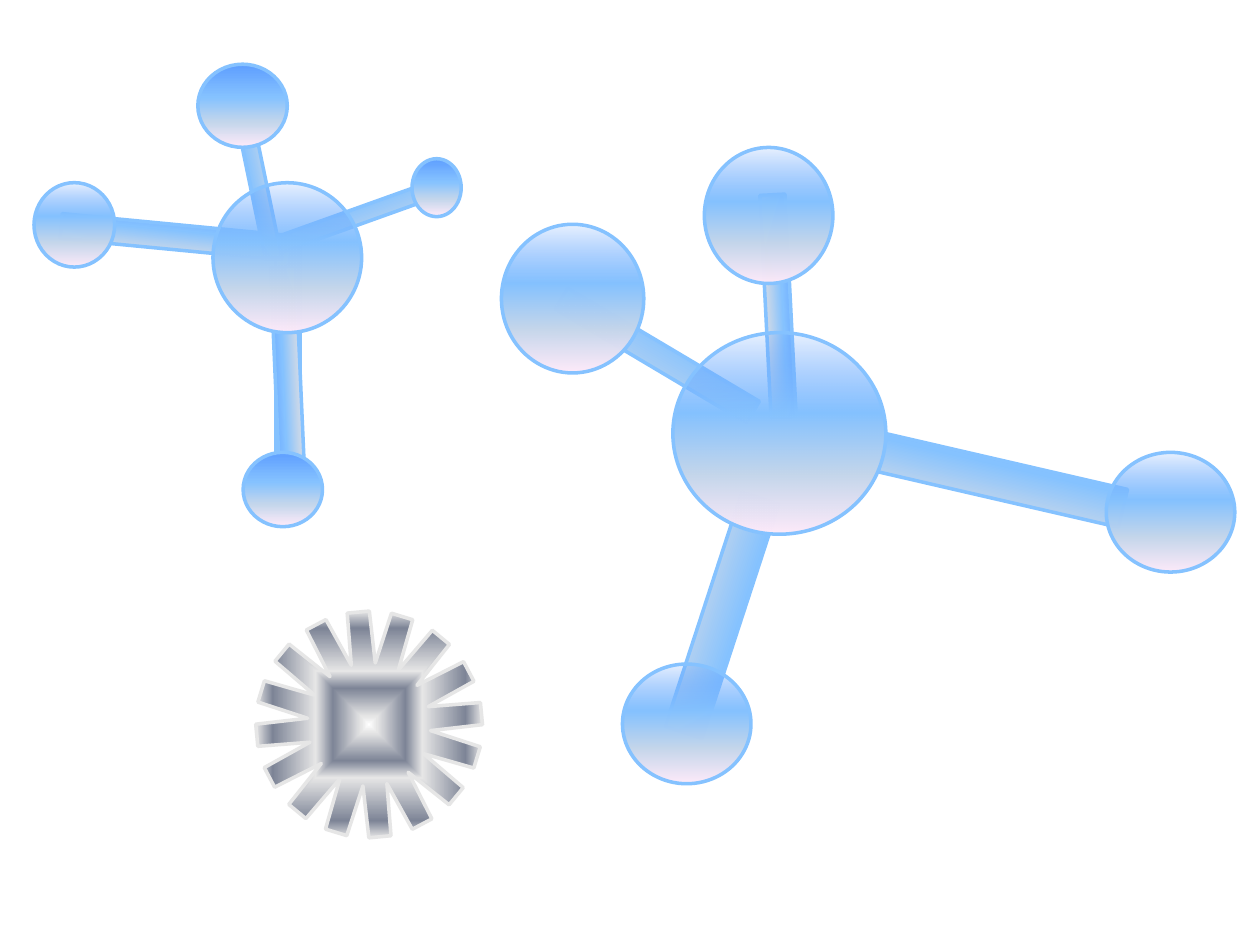
import math

import pptx
import pptx.dml.color
import pptx.enum.shapes
import pptx.oxml.ns
import pptx.util
from lxml import etree

Inches = pptx.util.Inches
Shapes = pptx.enum.shapes.MSO_SHAPE

COLORS = {
    "blue": "5E9EFF", "sky": "85C2FF", "mist": "C4D6EB", "rose": "FFEBFA",
    "white": "FFFFFF", "silver": "E6E6E6", "steel": "7D8496",
}
# Gradient stops: percent position, colour name, percent opacity
SOLID_BLUE = [(0, "blue", 100), (40, "sky", 100), (70, "mist", 100), (100, "rose", 100)]
GLASS_BLUE = [(0, "blue", 13)] + SOLID_BLUE[1:]
CHROME = [(0, "white", 100), (7, "silver", 100), (32, "steel", 100),
          (47, "silver", 100), (85, "steel", 100), (100, "silver", 100)]


def add_element(parent, tag, **attributes):
    values = {name: str(value) for name, value in attributes.items()}
    return etree.SubElement(parent, pptx.oxml.ns.qn(tag), values)


class MoleculeSlide:
    def __init__(self, slide, line_width=2):
        self.slide = slide
        self.line_width = pptx.util.Pt(line_width)

    def style(self, shape, stops, line_color, centred=False):
        shape.shadow.inherit = False
        shape.line.color.rgb = pptx.dml.color.RGBColor.from_string(COLORS[line_color])
        shape.line.width = self.line_width
        shape.fill.gradient()
        gradient = shape._element.spPr.find(pptx.oxml.ns.qn("a:gradFill"))
        for child in list(gradient):
            gradient.remove(child)
        gradient.set("rotWithShape", "1")
        stop_list = add_element(gradient, "a:gsLst")
        for position, color, opacity in stops:
            stop = add_element(stop_list, "a:gs", pos=position * 1000)
            color_element = add_element(stop, "a:srgbClr", val=COLORS[color])
            if opacity < 100:
                add_element(color_element, "a:alpha", val=opacity * 1000)
        if centred:
            focus = add_element(gradient, "a:path", path="shape")
            add_element(focus, "a:fillToRect", l=50000, t=50000, r=50000, b=50000)
        else:
            add_element(gradient, "a:lin", ang=90 * 60000, scaled=0)

    def add_preset(self, kind, box, stops):
        shape = self.slide.shapes.add_shape(kind, *[Inches(length) for length in box])
        self.style(shape, stops, "sky")
        return shape

    def add_bond(self, left, top, width, height, rotation):
        bond = self.add_preset(Shapes.RECTANGLE, (left, top, width, height), SOLID_BLUE)
        bond.rotation = rotation

    def add_atom(self, left, top, width, height, stops=GLASS_BLUE):
        self.add_preset(Shapes.OVAL, (left, top, width, height), stops)

    def add_gear(self, center_x, center_y, inner, outer, teeth, start):
        step = 360 / teeth
        points = []
        for tooth in range(teeth):
            # One valley, then the two corners of the tooth
            for radius, part in ((inner, 0), (outer, 0.25), (outer, 0.75)):
                angle = math.radians(start + (tooth + part) * step)
                points.append((Inches(center_x + radius * math.cos(angle)),
                               Inches(center_y + radius * math.sin(angle))))
        builder = self.slide.shapes.build_freeform(*points[0])
        builder.add_line_segments(points[1:], close=True)
        self.style(builder.convert_to_shape(), CHROME, "silver", centred=True)


def main():
    presentation = pptx.Presentation()
    presentation.slide_width = Inches(10)
    presentation.slide_height = Inches(7.5)
    page = MoleculeSlide(presentation.slides.add_slide(presentation.slide_layouts[6]))

    # Bonds behind the large atoms
    for bond in (
        (1.4, 2.79, 1.77, 0.2, 90),
        (1.4, 2.72, 1.77, 0.2, 90),
        (4.75, 4.73, 1.96, 0.31, 108.1),
        (1.4, 3.07, 1.77, 0.2, 90),
        (0.48, 1.78, 1.77, 0.2, 5.5),
        (6.98, 3.66, 1.96, 0.31, 13),
        (1.4, 2.9, 1.77, 0.2, 267.5),
        (4.33, 2.72, 1.77, 0.2, 30.7),
        (5.29, 2.33, 1.77, 0.2, 87.1),
    ):
        page.add_bond(*bond)

    # Right molecule: centre atom first
    for atom in (
        (5.34, 2.64, 1.69, 1.6),
        (3.98, 1.78, 1.13, 1.18),
        (8.78, 3.59, 1.02, 0.95),
        (5.59, 1.17, 1.02, 1.08),
        (4.94, 5.27, 1.02, 0.95),
    ):
        page.add_atom(*atom)

    # Left molecule: thin bonds, then atoms
    page.add_bond(2.12, 1.66, 1.4, 0.13, 340.3)
    page.add_bond(1.33, 1.3, 1.4, 0.13, 258.3)
    page.add_atom(1.69, 1.45, 1.18, 1.19)
    page.add_atom(3.27, 1.26, 0.39, 0.46, SOLID_BLUE)
    page.add_atom(0.27, 1.45, 0.64, 0.67)
    page.add_atom(1.57, 0.51, 0.71, 0.66, SOLID_BLUE)
    page.add_atom(1.93, 3.59, 0.63, 0.59, SOLID_BLUE)

    # Metal gear
    page.add_gear(2.93, 5.75, inner=0.49, outer=0.9, teeth=16, start=185.75)

    presentation.save("out.pptx")


if __name__ == "__main__":
    main()
